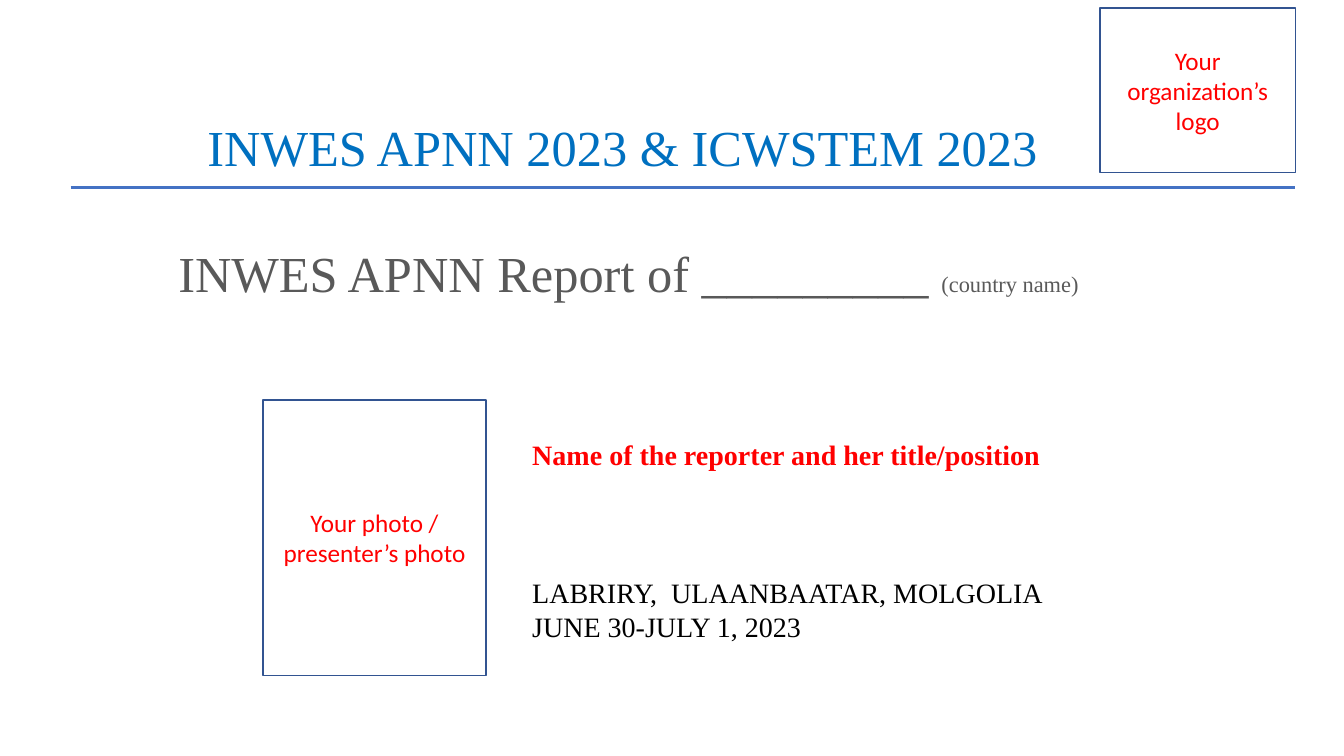
from dataclasses import dataclass

from lxml.etree import SubElement
from pptx import Presentation
from pptx.dml.color import RGBColor
from pptx.enum.shapes import MSO_CONNECTOR as Connector, MSO_SHAPE as Preset
from pptx.enum.text import MSO_ANCHOR as Anchor, MSO_AUTO_SIZE as AutoSize, PP_ALIGN as Align
from pptx.oxml.ns import qn
from pptx.slide import Slide
from pptx.text.text import TextFrame
from pptx.util import Emu, Pt

EMU_PER_PX = 9144


@dataclass(frozen=True)
class Theme:
    serif: str = "Times New Roman"
    sans: str = "Calibri"
    heading: str = "0070C0"
    report: str = "595959"
    prompt: str = "FF0000"
    venue: str = "000000"
    rule: str = "4472C4"
    frame: str = "325491"
    large: int = 36
    medium: int = 20
    label: int = 18
    small: int = 16
    rule_width: float = 1.5
    frame_width: float = 1
    line_spacing: float = 1.07
    space_after: int = 8


@dataclass(frozen=True)
class Box:
    left: int
    top: int
    width: int
    height: int

    def emu(self) -> tuple[Emu, Emu, Emu, Emu]:
        return px(self.left), px(self.top), px(self.width), px(self.height)


@dataclass(frozen=True)
class Style:
    font: str
    size: int
    color: str
    bold: bool = False


@dataclass(frozen=True)
class Caption:
    box: Box
    text: str
    style: Style


THEME = Theme()
HEADING = Style(THEME.serif, THEME.large, THEME.heading)
REPORT = Style(THEME.serif, THEME.large, THEME.report)
HINT = Style(THEME.serif, THEME.small, THEME.report)
PROMPT = Style(THEME.sans, THEME.label, THEME.prompt)
REPORTER = Style(THEME.serif, THEME.medium, THEME.prompt, bold=True)
VENUE = Style(THEME.serif, THEME.medium, THEME.venue)

DETAILS = (
    Caption(Box(518, 566, 781, 77), "LABRIRY,  ULAANBAATAR, MOLGOLIA\nJUNE 30-JULY 1, 2023", VENUE),
    Caption(Box(518, 429, 815, 44), "Name of the reporter and her title/position", REPORTER),
)
FRAMES = (
    Caption(Box(261, 397, 221, 273), "Your photo / presenter’s photo", PROMPT),
    Caption(Box(1091, 8, 194, 163), "Your organization’s logo", PROMPT),
)


def px(length: int) -> Emu:
    return Emu(length * EMU_PER_PX)


def rgb(color: str) -> RGBColor:
    return RGBColor.from_string(color)


def format_runs(frame: TextFrame, style: Style) -> None:
    for paragraph in frame.paragraphs:
        for run in paragraph.runs:
            run.font.name = style.font
            run.font.size = Pt(style.size)
            run.font.bold = style.bold
            run.font.color.rgb = rgb(style.color)


def space_headline(frame: TextFrame, align: Align) -> None:
    headline = frame.paragraphs[0]
    headline.alignment = align
    headline.line_spacing = THEME.line_spacing
    headline.space_after = Pt(THEME.space_after)


def draw_rule(slide: Slide, left: int, right: int, y: int) -> None:
    rule = slide.shapes.add_connector(Connector.STRAIGHT, px(left), px(y), px(right), px(y))
    rule.line.color.rgb = rgb(THEME.rule)
    rule.line.width = Pt(THEME.rule_width)
    SubElement(rule._element.spPr, qn("a:effectLst"))


def draw_heading(slide: Slide, heading: Caption) -> None:
    title = slide.shapes.title
    title.left, title.top, title.width, title.height = heading.box.emu()
    frame = title.text_frame
    frame.text = heading.text
    frame.word_wrap = True
    frame.auto_size = AutoSize.NONE
    frame.vertical_anchor = Anchor.TOP
    format_runs(frame, heading.style)
    space_headline(frame, Align.CENTER)


def draw_text(slide: Slide, caption: Caption) -> TextFrame:
    frame = slide.shapes.add_textbox(*caption.box.emu()).text_frame
    frame.word_wrap = True
    frame.text = caption.text
    format_runs(frame, caption.style)
    return frame


def draw_report(slide: Slide, report: Caption, hint: str) -> None:
    frame = draw_text(slide, report)
    space_headline(frame, Align.LEFT)
    country = frame.paragraphs[0].add_run()
    country.text = hint
    country.font.name = HINT.font
    country.font.size = Pt(HINT.size)
    country.font.color.rgb = rgb(HINT.color)


def draw_frame(slide: Slide, caption: Caption) -> None:
    outline = slide.shapes.add_shape(Preset.RECTANGLE, *caption.box.emu())
    outline.shadow.inherit = False
    outline.fill.background()
    outline.line.color.rgb = rgb(THEME.frame)
    outline.line.width = Pt(THEME.frame_width)
    frame = outline.text_frame
    frame.text = caption.text
    frame.word_wrap = True
    frame.vertical_anchor = Anchor.MIDDLE
    frame.paragraphs[0].alignment = Align.CENTER
    format_runs(frame, caption.style)


def main() -> None:
    deck = Presentation()
    deck.slide_width, deck.slide_height = px(1333), px(750)
    slide = deck.slides.add_slide(deck.slide_layouts[5])
    draw_rule(slide, 70, 1284, 186)
    draw_heading(slide, Caption(Box(-49, 106, 1333, 181), "INWES APNN 2023 & ICWSTEM 2023", HEADING))
    draw_report(
        slide,
        Caption(Box(167, 231, 1105, 181), "INWES APNN Report of _________ ", REPORT),
        "(country name)",
    )
    for detail in DETAILS:
        draw_text(slide, detail).auto_size = AutoSize.SHAPE_TO_FIT_TEXT
    for placeholder in FRAMES:
        draw_frame(slide, placeholder)
    deck.save("out.pptx")


if __name__ == "__main__":
    main()
